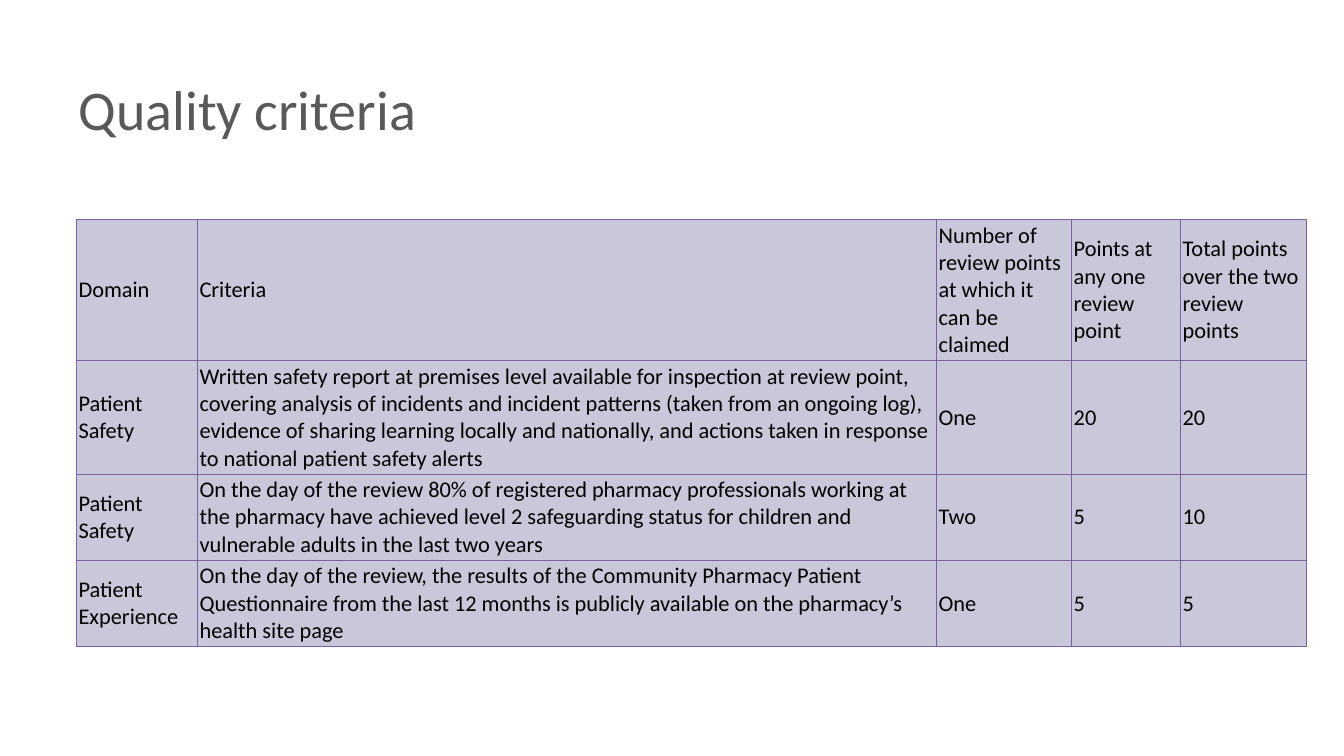
from typing import Any, NamedTuple

from lxml.etree import SubElement
from pptx import Presentation
from pptx.dml.color import RGBColor
from pptx.enum.text import MSO_ANCHOR, PP_ALIGN
from pptx.oxml.ns import qn
from pptx.util import Inches, Pt

LINE = "7D60A0"
FILL = "C9C7DA"
INK = "000000"
GREY = "595959"
EDGE = 0.75
PAD = Inches(0.02)
CELL = {
    "margin_left": PAD,
    "margin_right": PAD,
    "margin_top": PAD,
    "margin_bottom": PAD,
    "vertical_anchor": MSO_ANCHOR.MIDDLE,
}


class Column(NamedTuple):
    head: str
    width: float


class Row(NamedTuple):
    height: float
    texts: tuple[str, ...]


COLUMNS = (
    Column("Domain", 1.2),
    Column("Criteria", 7.33),
    Column("Number of review points at which it can be claimed", 1.34),
    Column("Points at any one review point", 1.08),
    Column("Total points over the two review points", 1.25),
)
ROWS = (
    Row(1.38, tuple(column.head for column in COLUMNS)),
    Row(1.11, (
        "Patient Safety",
        "Written safety report at premises level available for inspection at "
        "review point, covering analysis of incidents and incident patterns "
        "(taken from an ongoing log), evidence of sharing learning locally and "
        "nationally, and actions taken in response to national patient safety "
        "alerts",
        "One", "20", "20",
    )),
    Row(0.84, (
        "Patient Safety",
        "On the day of the review 80% of registered pharmacy professionals "
        "working at the pharmacy have achieved level 2 safeguarding status for "
        "children and vulnerable adults in the last two years",
        "Two", "5", "10",
    )),
    Row(0.84, (
        "Patient Experience",
        "On the day of the review, the results of the Community Pharmacy "
        "Patient Questionnaire from the last 12 months is publicly available "
        "on the pharmacy’s health site page",
        "One", "5", "5",
    )),
)


def tint(target: Any, code: str) -> None:
    """Colour a font or a solid fill from a hex string."""
    target.rgb = RGBColor.from_string(code)


def apply(target: Any, values: dict[str, Any]) -> None:
    for name, value in values.items():
        setattr(target, name, value)


def write(frame: Any, text: str, size: int, code: str) -> None:
    frame.text = text
    line = frame.paragraphs[0]
    line.alignment = PP_ALIGN.LEFT
    apply(line.font, {"name": "Calibri", "size": Pt(size), "bold": False})
    tint(line.font.color, code)


def border(cell: Any) -> None:
    props = cell._tc.get_or_add_tcPr()
    for side in ("lnL", "lnR", "lnT", "lnB"):
        edge = SubElement(props, qn(f"a:{side}"), w=str(Pt(EDGE)))
        solid = SubElement(edge, qn("a:solidFill"))
        SubElement(solid, qn("a:srgbClr"), val=LINE)


def add_title(slide: Any) -> None:
    title = slide.shapes.title
    apply(title, {
        "left": Inches(0.68),
        "top": Inches(0.29),
        "width": Inches(10.79),
        "height": Inches(1.56),
    })
    title.text_frame.vertical_anchor = MSO_ANCHOR.MIDDLE
    write(title.text_frame, "Quality criteria", 40, GREY)


def add_grid(slide: Any) -> None:
    width = sum(column.width for column in COLUMNS)
    height = sum(row.height for row in ROWS)
    table = slide.shapes.add_table(
        len(ROWS), len(COLUMNS),
        Inches(0.76), Inches(2.18), Inches(width), Inches(height),
    ).table
    apply(table, {"first_row": False, "horz_banding": False})
    for column, plan in zip(table.columns, COLUMNS):
        column.width = Inches(plan.width)
    for row, plan in zip(table.rows, ROWS):
        row.height = Inches(plan.height)
        for cell, text in zip(row.cells, plan.texts):
            apply(cell, CELL)
            write(cell.text_frame, text, 16, INK)
            border(cell)
            cell.fill.solid()
            tint(cell.fill.fore_color, FILL)


def main() -> None:
    deck = Presentation()
    apply(deck, {"slide_width": Inches(13.33), "slide_height": Inches(7.5)})
    slide = deck.slides.add_slide(deck.slide_layouts.get_by_name("Title Only"))
    add_title(slide)
    add_grid(slide)
    deck.save("out.pptx")


if __name__ == "__main__":
    main()
